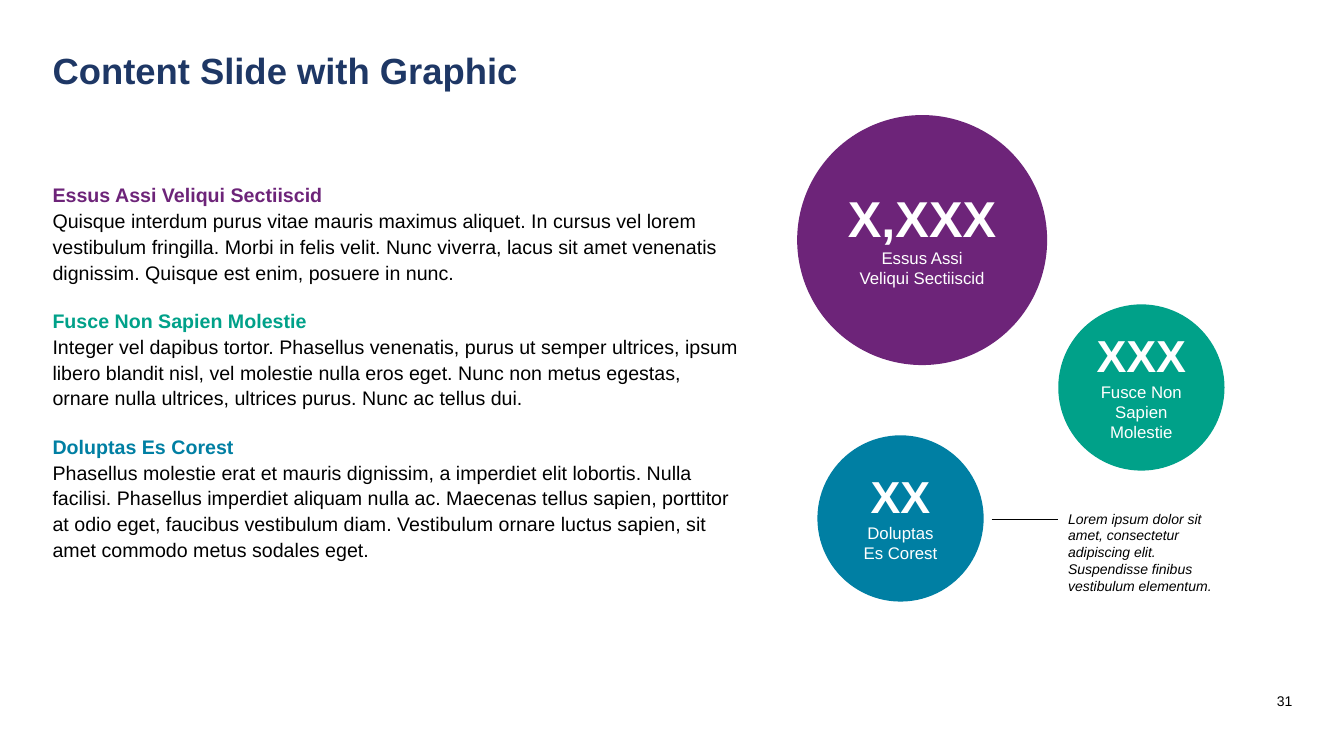
from dataclasses import dataclass

from lxml.etree import SubElement
from pptx import Presentation
from pptx.dml.color import RGBColor
from pptx.enum.shapes import MSO_CONNECTOR, MSO_SHAPE
from pptx.enum.text import MSO_ANCHOR, MSO_AUTO_SIZE, PP_ALIGN
from pptx.oxml.ns import qn
from pptx.util import Cm, Pt


@dataclass(frozen=True)
class Theme:
    """Colours, font and type sizes of the slide."""
    font: str = "Arial"
    navy: str = "1E3765"
    purple: str = "6D2479"
    green: str = "00A189"
    blue: str = "007FA3"
    black: str = "000000"
    white: str = "FFFFFF"
    title: int = 26
    body: int = 14
    label: int = 12
    small: int = 10
    large_figure: int = 36
    figure: int = 32


THEME = Theme()

SECTIONS = [
    ("Essus Assi Veliqui Sectiiscid", THEME.purple,
     "Quisque interdum purus vitae mauris maximus aliquet. In cursus vel lorem "
     "vestibulum fringilla. Morbi in felis velit. Nunc viverra, lacus sit amet "
     "venenatis dignissim. Quisque est enim, posuere in nunc."),
    ("Fusce Non Sapien Molestie", THEME.green,
     "Integer vel dapibus tortor. Phasellus venenatis, purus ut semper ultrices, "
     "ipsum libero blandit nisl, vel molestie nulla eros eget. Nunc non metus "
     "egestas, ornare nulla ultrices, ultrices purus. Nunc ac tellus dui."),
    ("Doluptas Es Corest", THEME.blue,
     "Phasellus molestie erat et mauris dignissim, a imperdiet elit lobortis. "
     "Nulla facilisi. Phasellus imperdiet aliquam nulla ac. Maecenas tellus "
     "sapien, porttitor at odio eget, faucibus vestibulum diam. Vestibulum "
     "ornare luctus sapien, sit amet commodo metus sodales eget."),
]

CIRCLES = [
    (20.09, 2.9, 6.3, THEME.purple, THEME.large_figure,
     ["X,XXX", "Essus Assi", "Veliqui Sectiiscid"]),
    (26.67, 7.67, 4.19, THEME.green, THEME.figure,
     ["XXX", "Fusce Non", "Sapien Molestie"]),
    (20.6, 10.97, 4.19, THEME.blue, THEME.figure,
     ["XX", "Doluptas", "Es Corest"]),
]


def add_span(para, text, size=THEME.body, color=THEME.black, bold=False, italic=False):
    """Add formatted text to a paragraph."""
    span = para.add_run()
    span.text = text
    span.font.name = THEME.font
    span.font.size = Pt(size)
    span.font.bold = bold
    span.font.italic = italic
    span.font.color.rgb = RGBColor.from_string(color)


def next_para(frame, index):
    """Return the first paragraph of a frame or append another one."""
    return frame.add_paragraph() if index else frame.paragraphs[0]


def place(box, left, top, width, height):
    """Move and size a box, in centimetres."""
    box.left, box.top = Cm(left), Cm(top)
    box.width, box.height = Cm(width), Cm(height)


def fill_title(box, text):
    """Write the slide title."""
    place(box, 1.07, 1.22, 23.8, 2.74)
    frame = box.text_frame
    frame.vertical_anchor = MSO_ANCHOR.TOP
    frame.auto_size = MSO_AUTO_SIZE.NONE
    para = frame.paragraphs[0]
    para.alignment = PP_ALIGN.LEFT
    para.line_spacing = 0.9
    add_span(para, text, size=THEME.title, color=THEME.navy, bold=True)


def fill_body(box, sections):
    """Write headed paragraphs without bullets."""
    place(box, 1.07, 4.42, 17.86, 11.61)
    frame = box.text_frame
    frame.auto_size = MSO_AUTO_SIZE.NONE
    for index, (heading, color, text) in enumerate(sections):
        para = next_para(frame, index)
        properties = para._p.get_or_add_pPr()
        properties.set("marL", "0")
        properties.set("indent", "0")
        SubElement(properties, qn("a:buNone"))
        para.line_spacing = 1.1
        para.space_before = Pt(16 if index else 0)
        add_span(para, heading, color=color, bold=True)
        para.add_line_break()
        add_span(para, text)


def add_circle(page, left, top, diameter, color, figure_size, lines):
    """Draw a filled circle with a figure above its label."""
    circle = page.shapes.add_shape(
        MSO_SHAPE.OVAL, Cm(left), Cm(top), Cm(diameter), Cm(diameter))
    circle.shadow.inherit = False
    circle.fill.solid()
    circle.fill.fore_color.rgb = RGBColor.from_string(color)
    circle.line.fill.background()
    frame = circle.text_frame
    frame.word_wrap = True
    frame.vertical_anchor = MSO_ANCHOR.MIDDLE
    frame.margin_top, frame.margin_bottom = Cm(0), Cm(0.13)
    for index, line in enumerate(lines):
        para = next_para(frame, index)
        para.alignment = PP_ALIGN.CENTER
        add_span(para, line, size=THEME.label if index else figure_size,
                 color=THEME.white, bold=index == 0)


def add_leader(page, left, right, height):
    """Draw a thin horizontal line."""
    leader = page.shapes.add_connector(
        MSO_CONNECTOR.STRAIGHT, Cm(left), Cm(height), Cm(right), Cm(height))
    leader.line.color.rgb = RGBColor.from_string(THEME.black)
    leader.line.width = Pt(0.25)
    SubElement(leader._element.spPr, qn("a:effectLst"))


def add_note(page, text, left, top, width, height, alignment=PP_ALIGN.LEFT,
             anchor=MSO_ANCHOR.TOP, italic=False):
    """Add a small text box."""
    box = page.shapes.add_textbox(Cm(left), Cm(top), Cm(width), Cm(height))
    frame = box.text_frame
    frame.word_wrap = True
    frame.vertical_anchor = anchor
    para = frame.paragraphs[0]
    para.alignment = alignment
    add_span(para, text, size=THEME.small, italic=italic)


def main():
    """Build and save the slide."""
    deck = Presentation()
    deck.slide_width, deck.slide_height = Cm(33.87), Cm(19.05)
    page = deck.slides.add_slide(deck.slide_layouts[1])
    fill_title(page.shapes.title, "Content Slide with Graphic")
    fill_body(page.placeholders[1], SECTIONS)
    add_note(page, "31", 30.84, 17.3, 1.98, 0.74,
             alignment=PP_ALIGN.RIGHT, anchor=MSO_ANCHOR.MIDDLE)
    for circle in CIRCLES:
        add_circle(page, *circle)
    add_leader(page, 24.99, 26.67, 13.08)
    add_note(page, "Lorem ipsum dolor sit amet, consectetur adipiscing elit. "
             "Suspendisse finibus vestibulum elementum.",
             26.67, 12.73, 4.27, 2.39, italic=True)
    deck.save("out.pptx")


if __name__ == "__main__":
    main()
